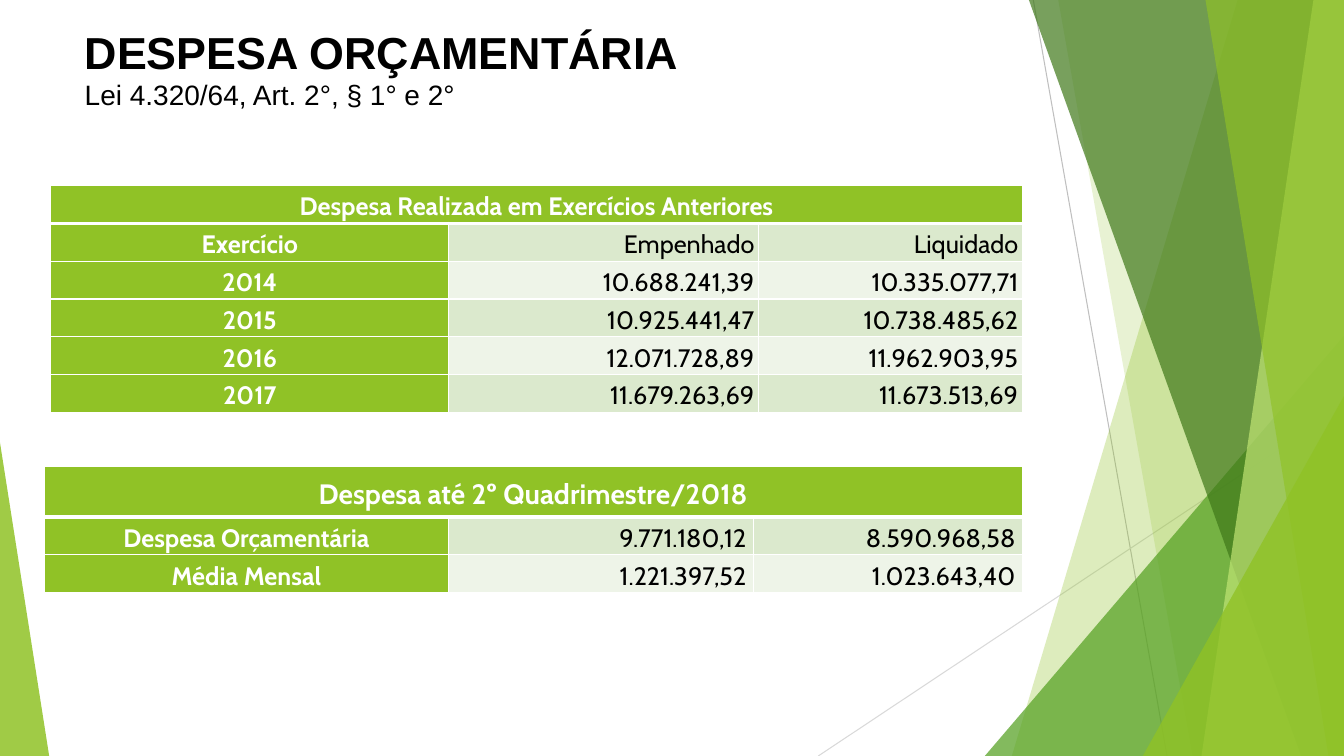
from lxml.etree import SubElement
from pptx import Presentation
from pptx.dml.color import RGBColor
from pptx.enum.shapes import MSO_CONNECTOR, MSO_SHAPE
from pptx.enum.text import MSO_ANCHOR, MSO_AUTO_SIZE, PP_ALIGN
from pptx.oxml.ns import qn
from pptx.util import Cm, Pt

COLORS = {
    "green": "90C226",
    "leaf": "54A021",
    "forest": "3F7819",
    "lime": "C0E474",
    "band_dark": "DBE9CD",
    "band_light": "EEF4E8",
    "ray_dark": "BFBFBF",
    "ray_light": "D9D9D9",
    "white": "FFFFFF",
    "black": "000000",
}
WIDTH, HEIGHT = 33.87, 19.05


def rgb(name):
    return RGBColor.from_string(COLORS[name])


def write(paragraph, text, size=18, font="Cabin", color="black", bold=False,
          align=PP_ALIGN.LEFT, spacing=1.0):
    paragraph.alignment = align
    paragraph.line_spacing = spacing
    run = paragraph.add_run()
    run.text = text
    run.font.name = font
    run.font.size = Pt(size)
    run.font.bold = bold
    run.font.color.rgb = rgb(color)


presentation = Presentation()
presentation.slide_width = Cm(WIDTH)
presentation.slide_height = Cm(HEIGHT)
slide = presentation.slides.add_slide(presentation.slide_layouts[5])
shapes = slide.shapes

rays = [
    ("ray_dark", 26.04, 0, 29.41, HEIGHT),
    ("ray_light", WIDTH, 10.24, 20.62, HEIGHT),
]
for color, *ends in rays:
    ray = shapes.add_connector(MSO_CONNECTOR.STRAIGHT, *map(Cm, ends))
    ray.line.color.rgb = rgb(color)
    ray.line.width = Pt(0.75)
    SubElement(ray.element.spPr, qn("a:effectLst"))

facets = [
    ("green", 30, "panel", (31.19, 25.5)),
    ("green", 20, "panel", (26.67, 30.05)),
    ("leaf", 72, "triangle", (24.82, 8.46, WIDTH, 1)),
    ("forest", 70, "panel", (25.93, 32.79)),
    ("lime", 70, "panel", (33.1, 30.28)),
    ("green", 65, "panel", (30.38, 33.48)),
    ("green", 80, "triangle", (28.8, 9.98, WIDTH, 1)),
    ("green", 85, "triangle", (0, 11.15, 1.24, 0)),
]
for color, opacity, kind, outline in facets:
    if kind == "panel":
        top_x, bottom_x = outline
        builder = shapes.build_freeform(Cm(top_x), 0)
        corners = [(WIDTH, 0), (WIDTH, HEIGHT), (bottom_x, HEIGHT)]
        builder.add_line_segments([(Cm(x), Cm(y)) for x, y in corners], close=True)
        facet = builder.convert_to_shape()
    else:
        left, top, right, apex = outline
        facet = shapes.add_shape(MSO_SHAPE.ISOSCELES_TRIANGLE, Cm(left), Cm(top),
                                 Cm(right - left), Cm(HEIGHT - top))
        facet.adjustments[0] = apex
    facet.shadow.inherit = False
    facet.line.fill.background()
    facet.fill.solid()
    facet.fill.fore_color.rgb = rgb(color)
    tint = facet.element.spPr.find(qn("a:solidFill")).find(qn("a:srgbClr"))
    SubElement(tint, qn("a:alpha"), val=str(opacity * 1000))

title = shapes.title
title.left, title.top, title.width, title.height = Cm(1.88), Cm(0.61), Cm(23), Cm(2.2)
heading = title.text_frame
heading.auto_size = MSO_AUTO_SIZE.NONE
heading.vertical_anchor = MSO_ANCHOR.TOP
heading.margin_top = heading.margin_bottom = 0
write(heading.paragraphs[0], "DESPESA ORÇAMENTÁRIA", size=32, font="Arial", bold=True)
write(heading.add_paragraph(), "Lei 4.320/64, Art. 2°, § 1° e 2°", size=20, font="Arial")

previous_years = [
    ["Despesa Realizada em Exercícios Anteriores", "", ""],
    ["Exercício", "Empenhado", "Liquidado"],
    ["2014", "10.688.241,39", "10.335.077,71"],
    ["2015", "10.925.441,47", "10.738.485,62"],
    ["2016", "12.071.728,89", "11.962.903,95"],
    ["2017", "11.679.263,69", "11.673.513,69"],
]
current_year = [
    ["Despesa até 2º Quadrimestre/2018", "", ""],
    ["Despesa Orçamentária", "9.771.180,12", "8.590.968,58"],
    ["Média Mensal", "1.221.397,52", "1.023.643,40"],
]
expenses = [
    (previous_years, 1.28, 4.68, (10.03, 7.8, 6.65), 0.93, 0.94, 18, 0.1),
    (current_year, 1.11, 11.76, (10.2, 7.68, 6.78), 1.27, 0.95, 20, 0.18),
]
for entries, left, top, widths, header_height, row_height, header_size, margin in expenses:
    heights = [header_height] + [row_height] * (len(entries) - 1)
    table = shapes.add_table(len(entries), len(widths), Cm(left), Cm(top),
                             Cm(sum(widths)), Cm(sum(heights))).table
    for column, width in zip(table.columns, widths):
        column.width = Cm(width)
    for row, height in zip(table.rows, heights):
        row.height = Cm(height)
    table.cell(0, 0).merge(table.cell(0, len(widths) - 1))

    for r, entry in enumerate(entries):
        for c, text in enumerate(entry):
            cell = table.cell(r, c)
            is_label = r == 0 or c == 0
            cell.vertical_anchor = MSO_ANCHOR.MIDDLE
            cell.margin_left = cell.margin_right = Cm(margin)
            cell.margin_top = cell.margin_bottom = Cm(0.03)
            for side in "LRTB":
                thick = (r, side) in [(0, "B"), (1, "T")]
                border = SubElement(cell._tc.get_or_add_tcPr(), qn(f"a:ln{side}"),
                                    w=str(Pt(3 if thick else 1)))
                SubElement(SubElement(border, qn("a:solidFill")), qn("a:srgbClr"),
                           val=COLORS["white"])
            band = "band_dark" if r % 2 else "band_light"
            cell.fill.solid()
            cell.fill.fore_color.rgb = rgb("green" if is_label else band)
            if text:
                write(cell.text_frame.paragraphs[0], text,
                      size=header_size if r == 0 else 18,
                      color="white" if is_label else "black",
                      bold=is_label,
                      align=PP_ALIGN.CENTER if is_label else PP_ALIGN.RIGHT,
                      spacing=1.15)

presentation.save("out.pptx")
